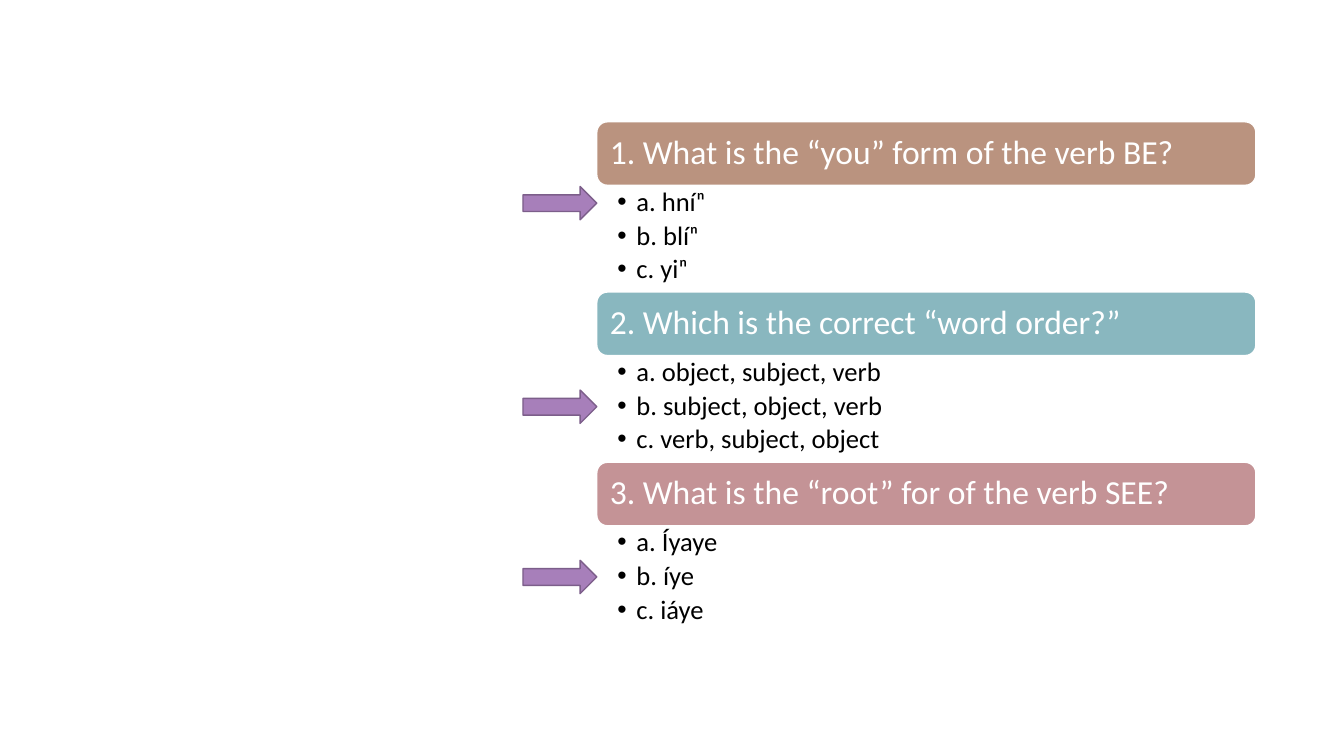
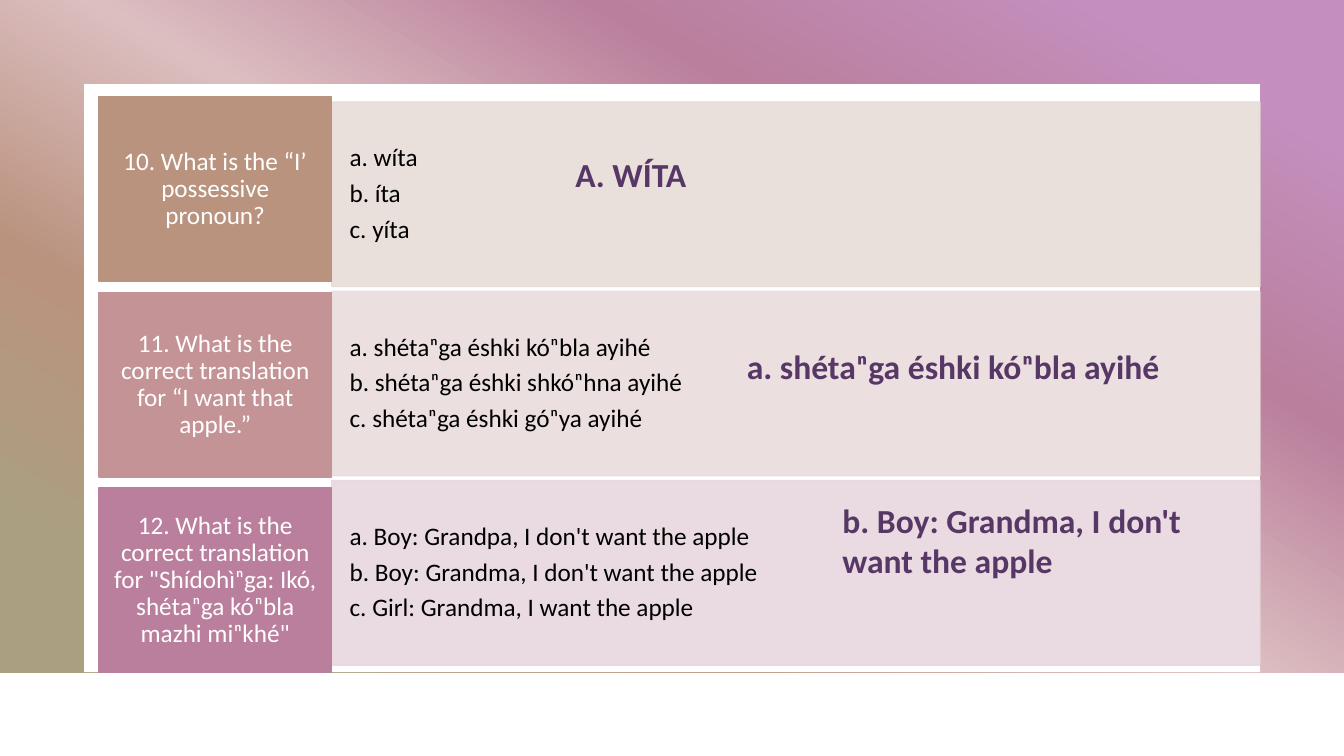
"""Build two quiz review slides with the answers marked."""
from lxml import etree
from pptx import Presentation
from pptx.dml.color import RGBColor
from pptx.enum import shapes, text
from pptx.oxml.ns import qn
from pptx.util import Cm, Pt

FONT = "Calibri"
WHITE, BLACK, PLUM = "FFFFFF", "000000", "573766"
TAN, TEAL, ROSE, MAUVE = "BA937F", "89B7BF", "C49396", "BA7F9C"
ARROW, ARROW_EDGE = "A77FBA", "7C5E8A"
GRADIENT = [(10, "C38FBE"), (30, MAUVE), (50, "DCBEC0"), (70, TAN), (90, "AAA081")]
SLIDE_SIZE = (33.87, 19.05)

FORM_QUIZ = [
    ("1. What is the “you” form of the verb BE?", TEAL and TAN,
     ["a. hníⁿ", "b. blíⁿ", "c. yiⁿ"], 0),
    ("2. Which is the correct “word order?”", TEAL,
     ["a. object, subject, verb", "b. subject, object, verb", "c. verb, subject, object"], 1),
    ("3. What is the “root” for of the verb SEE?", ROSE,
     ["a. Íyaye", "b. íye", "c. iáye"], 1),
]
TRANSLATION_QUIZ = [
    ("10. What is the “I’ possessive pronoun?", TAN, "E7DCD8",
     ["a. wíta", "b. íta", "c. yíta"],
     "A. WÍTA", (14.25, 3.76, 3.99, 1.27)),
    ("11. What is the correct translation for “I want that apple.”", ROSE, "EADCDD",
     ["a. shétaⁿga éshki kóⁿbla ayihé", "b. shétaⁿga éshki shkóⁿhna ayihé",
      "c. shétaⁿga éshki góⁿya ayihé"],
     "a. shétaⁿga éshki kóⁿbla ayihé", (18.57, 8.59, 12.8, 2.31)),
    ("12. What is the correct translation for \"Shídohìⁿga: Ikó, shétaⁿga kóⁿbla mazhi miⁿkhé\"",
     MAUVE, "E7D8DE",
     ["a. Boy: Grandpa, I don't want the apple", "b. Boy: Grandma, I don't want the apple",
      "c. Girl: Grandma, I want the apple"],
     "b. Boy: Grandma, I don't want the apple", (20.98, 12.47, 10.77, 3.33)),
]


def rgb(value):
    """Return the colour for a hex string."""
    return RGBColor.from_string(value)


def paint(shape, fill, line=None):
    """Give a shape a solid fill and a thin line, or no line."""
    shape.fill.solid()
    shape.fill.fore_color.rgb = rgb(fill)
    if line:
        shape.line.color.rgb = rgb(line)
        shape.line.width = Pt(1)
    else:
        shape.line.fill.background()


def make_translucent(shape, percent):
    """Set the opacity of a shape's fill and line."""
    for colour in shape.element.spPr.iter(qn("a:srgbClr")):
        etree.SubElement(colour, qn("a:alpha"), val=str(percent * 1000))


def paint_gradient(shape):
    """Fill a shape with the diagonal theme gradient."""
    shape.fill.gradient()
    shape.fill.gradient_angle = 240
    stops = shape.element.spPr.find(".//" + qn("a:gsLst"))
    stops.clear()
    for position, colour in GRADIENT:
        stop = etree.SubElement(stops, qn("a:gs"), pos=str(position * 1000))
        etree.SubElement(stop, qn("a:srgbClr"), val=colour)


def add_block(slide, kind, box, fill, line=None):
    """Add a preset shape without a shadow."""
    block = slide.shapes.add_shape(kind, *map(Cm, box))
    block.shadow.inherit = False
    paint(block, fill, line)
    return block


def write(shape, lines, size, colour, insets=(0.25, 0.13), spacing=0.9, after=0,
          anchor=text.MSO_ANCHOR.MIDDLE, align=text.PP_ALIGN.LEFT, bold=False):
    """Write and format the paragraphs of a shape."""
    frame = shape.text_frame
    frame.text = "\n".join(lines)
    frame.word_wrap = True
    frame.auto_size = text.MSO_AUTO_SIZE.NONE
    frame.vertical_anchor = anchor
    frame.margin_left = frame.margin_right = Cm(insets[0])
    frame.margin_top = frame.margin_bottom = Cm(insets[1])
    for paragraph in frame.paragraphs:
        paragraph.alignment = align
        paragraph.line_spacing = spacing
        paragraph.space_before, paragraph.space_after = Pt(0), Pt(after)
        for run in paragraph.runs:
            run.font.name, run.font.size, run.font.bold = FONT, Pt(size), bold
            run.font.color.rgb = rgb(colour)


def set_bullets(shape, indent=0):
    """Hang bullets at an indent in cm, or remove them at zero."""
    for paragraph in shape.text_frame.paragraphs:
        properties = paragraph._p.get_or_add_pPr()
        properties.set("marL", str(Cm(indent)))
        properties.set("indent", str(-Cm(indent)))
        if indent:
            etree.SubElement(properties, qn("a:buFont"), typeface="Arial")
            etree.SubElement(properties, qn("a:buChar"), char="•")
        else:
            etree.SubElement(properties, qn("a:buNone"))


def place_list(options, box):
    """Move a body placeholder to a box and to the front."""
    options.left, options.top, options.width, options.height = map(Cm, box)
    options.element.getparent().append(options.element)


def add_quiz_slide(deck):
    """Add a slide and return it with its three list placeholders."""
    slide = deck.slides.add_slide(deck.slide_layouts[4])
    title, *lists, spare = list(slide.placeholders)
    for unused in (title, spare):
        unused.element.getparent().remove(unused.element)
    return slide, lists


def build_form_slide(deck):
    """Stack question bands over bulleted options, with arrows at the answers."""
    slide, lists = add_quiz_slide(deck)
    left, width, band_height, list_height = 15.04, 16.61, 1.6, 2.69
    for row, (question, colour, choices, answer) in enumerate(FORM_QUIZ):
        top = 3.07 + row * (band_height + list_height)
        band = add_block(slide, shapes.MSO_SHAPE.ROUNDED_RECTANGLE,
                         (left, top, width, band_height), colour, WHITE)
        write(band, [question], 24, WHITE, insets=(0.25, 0.25))
        options = lists[row]
        place_list(options, (left, top + band_height, width, list_height))
        write(options, choices, 19, BLACK, insets=(0.52, 0.08), after=3.5,
              anchor=text.MSO_ANCHOR.TOP)
        set_bullets(options, 0.48)
        add_block(slide, shapes.MSO_SHAPE.RIGHT_ARROW,
                  (left - 1.86, top + 1.63 + 0.84 * answer, 1.86, 0.84), ARROW, ARROW_EDGE)


def build_translation_slide(deck):
    """Set question tiles beside option panels, with the answers written out."""
    slide, lists = add_quiz_slide(deck)
    frame_height, margin = 16.94, 2.12
    backdrop = add_block(slide, shapes.MSO_SHAPE.RECTANGLE,
                         (0, 0, SLIDE_SIZE[0], frame_height), WHITE)
    paint_gradient(backdrop)
    add_block(slide, shapes.MSO_SHAPE.RECTANGLE,
              (margin, margin, SLIDE_SIZE[0] - 2 * margin, frame_height - margin), WHITE)
    row_height = 4.65
    for row, (question, colour, tint, choices, _, _) in enumerate(TRANSLATION_QUIZ):
        panel = lists[row]
        place_list(panel, (8.36, 2.57 + 4.77 * row, 23.39, row_height))
        paint(panel, tint, tint)
        make_translucent(panel, 90)
        write(panel, choices, 18, BLACK, insets=(0.45, 0.5), after=6)
        set_bullets(panel)
        tile = add_block(slide, shapes.MSO_SHAPE.RECTANGLE,
                         (2.5, 2.44 + 4.93 * row, 5.85, row_height), colour, colour)
        write(tile, [question], 18, WHITE, insets=(0.3, 0.45), after=6,
              align=text.PP_ALIGN.CENTER)
    for *_, answer, box in TRANSLATION_QUIZ:
        note = slide.shapes.add_textbox(*map(Cm, box))
        write(note, [answer], 24, PLUM, spacing=1, anchor=text.MSO_ANCHOR.TOP, bold=True)


def main():
    """Build and save the deck."""
    deck = Presentation()
    deck.slide_width, deck.slide_height = map(Cm, SLIDE_SIZE)
    build_form_slide(deck)
    build_translation_slide(deck)
    deck.save("out.pptx")


if __name__ == "__main__":
    main()
